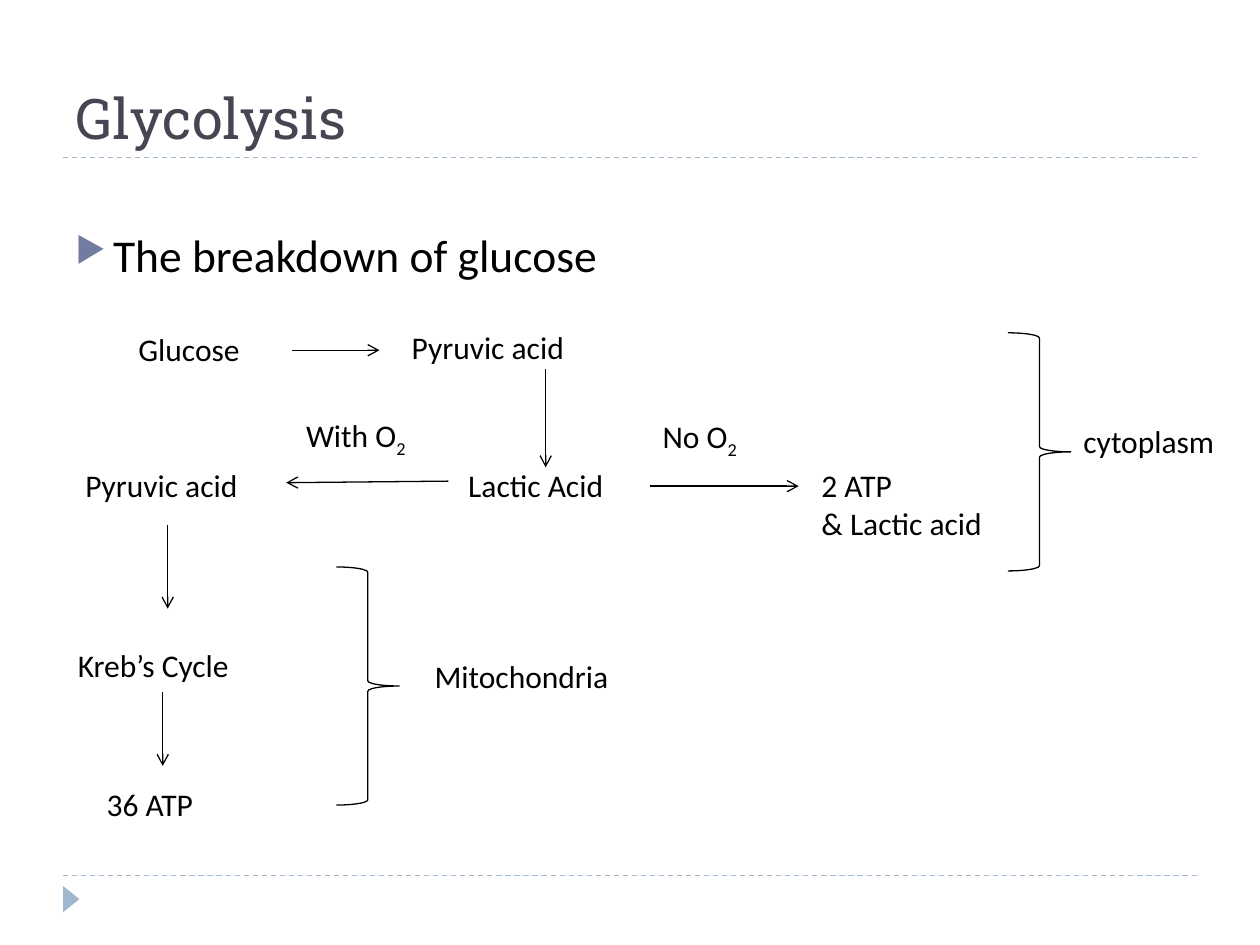
"""Build the glycolysis pathway slide."""
from lxml.etree import SubElement
from pptx import Presentation
from pptx.dml.color import RGBColor
from pptx.enum.dml import MSO_LINE
from pptx.enum.shapes import MSO_CONNECTOR, MSO_SHAPE
from pptx.enum.text import MSO_ANCHOR, PP_ALIGN
from pptx.oxml.ns import qn
from pptx.util import Cm, Pt

THEME = {
    "title_font": "Roboto Slab", "body_font": "Calibri",
    "title": "464653", "ink": "000000", "rule": "9FB8CD", "bullet": "727CA3",
    "title_size": 32, "body_size": 26, "label_size": 18, "line": 0.75,
}
TITLE = ("Glycolysis", (1.27, 0.43, 22.86, 2.74))
BODY = ("The breakdown of glucose", (1.27, 4.45, 22.86, 2.11))
LABELS = [
    ("Glucose", "", 2.54, 6.53, 4.24),
    ("Pyruvic acid", "", 8.05, 6.48, 4.24),
    ("Lactic Acid", "", 9.19, 9.27, 3.61),
    ("2 ATP\n& Lactic acid", "", 16.31, 9.27, 6.25),
    ("Kreb’s Cycle", "", 1.32, 12.9, 5.46),
    ("Pyruvic acid", "", 1.47, 9.27, 4.98),
    ("36 ATP", "", 1.9, 15.7, 4.01),
    ("No O", "2", 13.11, 8.28, 2.34),
    ("With O", "2", 5.92, 8.26, 3.28),
    ("Mitochondria", "", 8.51, 13.13, 6.1),
    ("cytoplasm", "", 21.59, 8.38, 3.38),
]
ARROWS = [
    (5.89, 7.06, 7.65, 7.06),
    (11, 7.44, 11, 9.42),
    (13.11, 9.8, 16.1, 9.8),
    (9.04, 9.7, 5.77, 9.73),
    (3.38, 10.59, 3.38, 12.27),
    (3.28, 13.94, 3.28, 15.44),
]
BRACES = [(6.78, 11.43), (20.32, 6.71)]
BRACE_SIZE = (1.27, 4.8)
RULES = [17.65, 3.18]
RULE_ENDS = (1.27, 24.13)
MARKER = (1.17, 17.96, 0.53, 0.33)


def color(key):
    return RGBColor.from_string(THEME[key])


def style(p, font, size, ink):
    for r in p.runs:
        r.font.name = THEME[font]
        r.font.size = Pt(THEME[size])
        r.font.color.rgb = color(ink)


def add_line(s, ends, ink):
    ln = s.shapes.add_connector(MSO_CONNECTOR.STRAIGHT, *map(Cm, ends))
    ln.line.color.rgb = color(ink)
    ln.line.width = Pt(THEME["line"])
    SubElement(ln._element.spPr, qn("a:effectLst"))
    return ln


def add_rule(s, y):
    left, right = RULE_ENDS
    add_line(s, (left, y, right, y), "rule").line.dash_style = MSO_LINE.DASH


def add_arrow(s, ends):
    ln = add_line(s, ends, "ink")
    SubElement(ln.line._get_or_add_ln(), qn("a:tailEnd"), type="arrow")


def add_marker(s):
    sp = s.shapes.add_shape(MSO_SHAPE.ISOSCELES_TRIANGLE, *map(Cm, MARKER))
    sp.rotation = 90
    sp.shadow.inherit = False
    sp.fill.solid()
    sp.fill.fore_color.rgb = color("rule")
    sp.line.fill.background()


def add_brace(s, at):
    sp = s.shapes.add_shape(MSO_SHAPE.RIGHT_BRACE, *map(Cm, at + BRACE_SIZE))
    sp.shadow.inherit = False
    sp.fill.background()
    sp.line.color.rgb = color("ink")
    sp.line.width = Pt(THEME["line"])


def add_title(s):
    text, box = TITLE
    sp = s.shapes.title
    sp.left, sp.top, sp.width, sp.height = map(Cm, box)
    tf = sp.text_frame
    tf.text = text
    tf.vertical_anchor = MSO_ANCHOR.BOTTOM
    p = tf.paragraphs[0]
    p.alignment = PP_ALIGN.LEFT
    style(p, "title_font", "title_size", "title")


def add_text(s, text, box, size):
    tf = s.shapes.add_textbox(*map(Cm, box)).text_frame
    tf.word_wrap = True
    tf.text = text
    for p in tf.paragraphs:
        style(p, "body_font", size, "ink")
    return tf


def add_body(s):
    p = add_text(s, *BODY, "body_size").paragraphs[0]
    pPr = p._p.get_or_add_pPr()
    pPr.set("marL", str(Cm(0.76)))
    pPr.set("indent", str(Cm(-0.76)))
    clr = SubElement(pPr, qn("a:buClr"))
    SubElement(clr, qn("a:srgbClr"), val=THEME["bullet"])
    SubElement(pPr, qn("a:buSzPct"), val="76000")
    SubElement(pPr, qn("a:buChar"), char="▶")


def add_label(s, text, sub, left, top, width):
    height = 0.25 + 0.77 * len(text.split("\n"))
    tf = add_text(s, text, (left, top, width, height), "label_size")
    if sub:
        p = tf.paragraphs[-1]
        r = p.add_run()
        r.text = sub
        style(p, "body_font", "label_size", "ink")
        r.font._element.set("baseline", "-25000")


def main():
    prs = Presentation()
    prs.slide_width, prs.slide_height = Cm(25.4), Cm(19.05)
    s = prs.slides.add_slide(prs.slide_layouts[5])
    for y in RULES:
        add_rule(s, y)
    add_marker(s)
    add_title(s)
    add_body(s)
    for label in LABELS:
        add_label(s, *label)
    for ends in ARROWS:
        add_arrow(s, ends)
    for at in BRACES:
        add_brace(s, at)
    prs.save("out.pptx")


if __name__ == "__main__":
    main()
